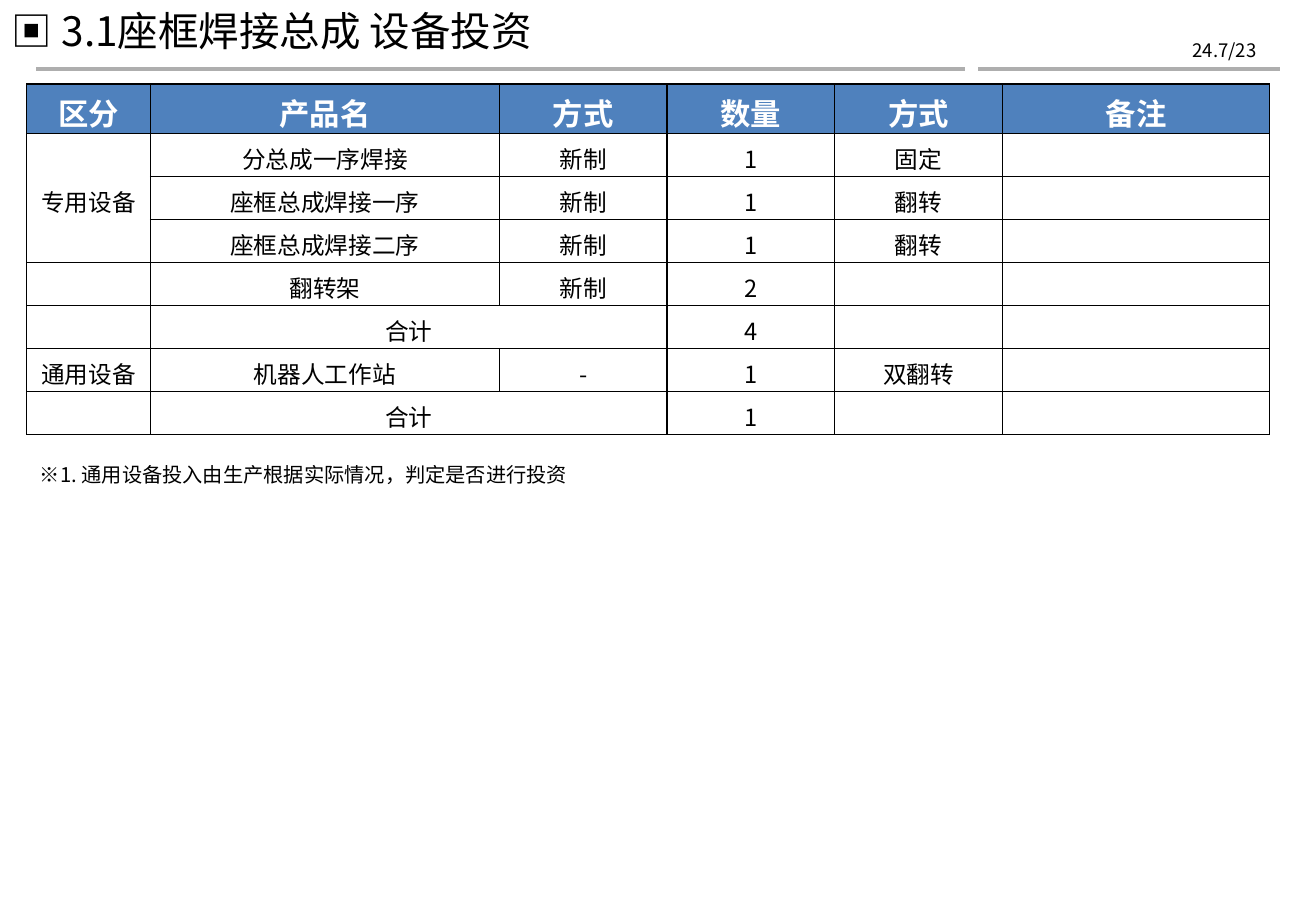
from lxml import etree
from pptx import Presentation, util as u
from pptx.dml.color import RGBColor
from pptx.enum import shapes, text
from pptx.oxml import ns

WIDE, HIGH = 10.83, 7.5
SANS, DATE = "Noto Sans CJK SC", "Noto Sans CJK KR"
BLACK, WHITE, BLUE, GREY = "000000", "FFFFFF", "4F81BD", "AEAEAE"
MID = text.PP_ALIGN.CENTER

COLS = [1.02, 2.87, 1.38, 1.38, 1.38, 2.2]
HEAD, ROW = 0.41, 0.354
ROWS = [
    ["区分", "产品名", "方式", "数量", "方式", "备注"],
    ["专用设备", "分总成一序焊接", "新制", "1", "固定", ""],
    ["", "座框总成焊接一序", "新制", "1", "翻转", ""],
    ["", "座框总成焊接二序", "新制", "1", "翻转", ""],
    ["", "翻转架", "新制", "2", "", ""],
    ["", "合计", "", "4", "", ""],
    ["通用设备", "机器人工作站", "-", "1", "双翻转", ""],
    ["", "合计", "", "1", "", ""],
]
# Merged cells: first row, first column, last row, last column
SPANS = [(1, 0, 3, 0), (5, 1, 5, 2), (7, 1, 7, 2)]


def color(code):
    return RGBColor.from_string(code)


def inches(*sizes):
    return [u.Inches(s) for s in sizes]


def write(frame, words, size, ink=BLACK, face=SANS, bold=False, align=None):
    para = frame.paragraphs[0]
    para.alignment = align
    if not words:  # keeps an empty cell as low as its row
        etree.SubElement(para._p, ns.qn("a:endParaRPr"), sz=str(size * 100))
        return
    run = para.add_run()
    run.text = words
    font = run.font
    font.size, font.bold, font.name = u.Pt(size), bold, face
    font.color.rgb = color(ink)
    east = etree.SubElement(run._r.get_or_add_rPr(), ns.qn("a:ea"))
    east.set("typeface", face)


def label(slide, box, words, size, **style):
    frame = slide.shapes.add_textbox(*inches(*box)).text_frame
    frame.word_wrap = True
    write(frame, words, size, **style)


def rule(slide, left, right, top):
    line = slide.shapes.add_connector(
        shapes.MSO_CONNECTOR.STRAIGHT, *inches(left, top, right, top))
    line.line.color.rgb = color(GREY)
    line.line.width = u.Pt(2)
    etree.SubElement(line._element.spPr, ns.qn("a:effectLst"))


def border(cell):
    props = cell._tc.get_or_add_tcPr()
    for spot, side in enumerate(("lnL", "lnR", "lnT", "lnB")):
        line = etree.Element(ns.qn("a:" + side), w=str(u.Pt(1)))
        fill = etree.SubElement(line, ns.qn("a:solidFill"))
        etree.SubElement(fill, ns.qn("a:srgbClr"), val=BLACK)
        props.insert(spot, line)


def header(slide, left, top, width, height):
    # Title, date and the split rule below them
    base = top + height
    label(slide, (left, top, width * 0.84, 0.5), "▣ 3.1座框焊接总成 设备投资", 24)
    label(slide, (left + width - 1.48, base - 0.3, 1.09, 0.29), "24.7/23", 11,
          face=DATE, align=text.PP_ALIGN.RIGHT)
    rule(slide, left + 0.3, left + 7.94, base)
    rule(slide, left + 8.05, left + width - 0.3, base)


def grid(slide, left, top):
    # Equipment table
    high = HEAD + ROW * (len(ROWS) - 1)
    table = slide.shapes.add_table(
        len(ROWS), len(COLS), *inches(left, top, sum(COLS), high)).table
    table.horz_banding = False
    for col, width in zip(table.columns, COLS):
        col.width = u.Inches(width)
    for r, words in enumerate(ROWS):
        first = r == 0
        table.rows[r].height = u.Inches(HEAD if first else ROW)
        for c, word in enumerate(words):
            cell = table.cell(r, c)
            cell.margin_top, cell.margin_bottom = inches(0.05, 0)
            cell.vertical_anchor = (text.MSO_ANCHOR.TOP if first
                                    else text.MSO_ANCHOR.MIDDLE)
            cell.fill.solid()
            cell.fill.fore_color.rgb = color(BLUE if first else WHITE)
            border(cell)
            write(cell.text_frame, word, 18 if first else 14,
                  ink=WHITE if first else BLACK, bold=first, align=MID)
    for r, c, end, last in SPANS:
        table.cell(r, c).merge(table.cell(end, last))


def main():
    deck = Presentation()
    deck.slide_width, deck.slide_height = inches(WIDE, HIGH)
    slide = deck.slides.add_slide(deck.slide_layouts[6])
    header(slide, 0, 0, WIDE, 0.57)
    grid(slide, 0.22, 0.69)
    # Footnote
    label(slide, (0.23, HIGH / 2 + 0.01, 9.69, 0.3),
          "※1. 通用设备投入由生产根据实际情况，判定是否进行投资", 12)
    deck.save("out.pptx")


if __name__ == "__main__":
    main()
